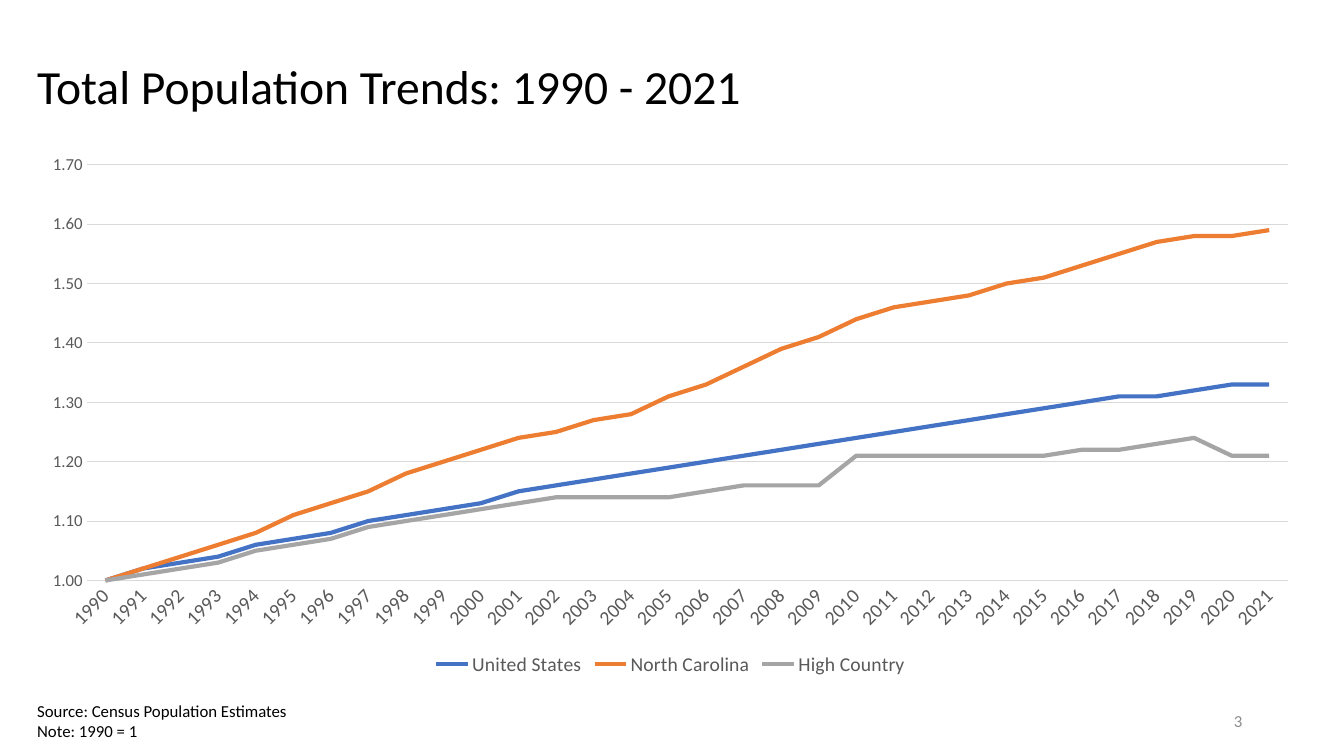
import pptx
import pptx.chart.data
import pptx.dml.color
import pptx.enum.chart
import pptx.enum.text
import pptx.util
from pptx.util import Inches

FONT = "Calibri"
COLORS = {
    "text": "000000",
    "axis": "595959",
    "grid": "D9D9D9",
    "number": "8C8C8C",
    "United States": "4472C4",
    "North Carolina": "ED7D31",
    "High Country": "A5A5A5",
}
YEARS = range(1990, 2022)
POPULATION_INDEX = {
    "United States": [
        1, 1.02, 1.03, 1.04, 1.06, 1.07, 1.08, 1.1, 1.11, 1.12, 1.13,
        1.15, 1.16, 1.17, 1.18, 1.19, 1.2, 1.21, 1.22, 1.23, 1.24, 1.25,
        1.26, 1.27, 1.28, 1.29, 1.3, 1.31, 1.31, 1.32, 1.33, 1.33],
    "North Carolina": [
        1, 1.02, 1.04, 1.06, 1.08, 1.11, 1.13, 1.15, 1.18, 1.2, 1.22,
        1.24, 1.25, 1.27, 1.28, 1.31, 1.33, 1.36, 1.39, 1.41, 1.44, 1.46,
        1.47, 1.48, 1.5, 1.51, 1.53, 1.55, 1.57, 1.58, 1.58, 1.59],
    "High Country": [
        1, 1.01, 1.02, 1.03, 1.05, 1.06, 1.07, 1.09, 1.1, 1.11, 1.12,
        1.13, 1.14, 1.14, 1.14, 1.14, 1.15, 1.16, 1.16, 1.16, 1.21, 1.21,
        1.21, 1.21, 1.21, 1.21, 1.22, 1.22, 1.23, 1.24, 1.21, 1.21],
}


def format_font(font, size, color):
    font.name = FONT
    font.size = pptx.util.Pt(size)
    font.color.rgb = pptx.dml.color.RGBColor.from_string(COLORS[color])


def add_text(text, left, top, width, height, size=12, color="text", wrap=True,
             anchor=pptx.enum.text.MSO_ANCHOR.MIDDLE,
             align=pptx.enum.text.PP_ALIGN.LEFT, line_spacing=1.0):
    """Add a text box with one paragraph for each line of text."""
    box = slide.shapes.add_textbox(
        Inches(left), Inches(top), Inches(width), Inches(height))
    frame = box.text_frame
    frame.word_wrap = wrap
    frame.vertical_anchor = anchor
    frame.text = text
    for paragraph in frame.paragraphs:
        paragraph.alignment = align
        paragraph.line_spacing = line_spacing
        format_font(paragraph.runs[0].font, size, color)
    return box


presentation = pptx.Presentation()
presentation.slide_width = Inches(13.33)
presentation.slide_height = Inches(7.5)
slide = presentation.slides.add_slide(presentation.slide_layouts[6])

add_text("Total Population Trends: 1990 - 2021", 0.27, 0.34, 12.76, 1.09,
         size=34, line_spacing=0.9)

# Population line chart
chart_data = pptx.chart.data.CategoryChartData(number_format="0.00")
chart_data.categories = [str(year) for year in YEARS]
for region, values in POPULATION_INDEX.items():
    chart_data.add_series(region, values)
chart = slide.shapes.add_chart(
    pptx.enum.chart.XL_CHART_TYPE.LINE,
    Inches(0.27), Inches(1.43), Inches(12.76), Inches(5.32), chart_data).chart
format_font(chart.font, 10, "text")
chart.has_title = False
chart.has_legend = True
chart.legend.position = pptx.enum.chart.XL_LEGEND_POSITION.BOTTOM
chart.legend.include_in_layout = False
format_font(chart.legend.font, 14, "axis")

plot = chart.plots[0]
plot.vary_by_categories = False
for series in plot.series:
    series.smooth = False
    series.marker.style = pptx.enum.chart.XL_MARKER_STYLE.NONE
    series.format.line.width = pptx.util.Pt(3)
    series.format.line.color.rgb = pptx.dml.color.RGBColor.from_string(
        COLORS[series.name])

year_axis, index_axis = chart.category_axis, chart.value_axis
for axis, size in ((year_axis, 14), (index_axis, 12)):
    axis.major_tick_mark = pptx.enum.chart.XL_TICK_MARK.NONE
    axis.minor_tick_mark = pptx.enum.chart.XL_TICK_MARK.NONE
    format_font(axis.tick_labels.font, size, "axis")
index_axis.minimum_scale = 1
index_axis.maximum_scale = 1.7
index_axis.major_unit = 0.1
index_axis.tick_labels.number_format = "0.00"
index_axis.tick_labels.number_format_is_linked = False
index_axis.format.line.fill.background()
for line in (year_axis.format.line, index_axis.major_gridlines.format.line):
    line.width = pptx.util.Pt(0.75)
    line.color.rgb = pptx.dml.color.RGBColor.from_string(COLORS["grid"])

# Footer
add_text("3", 9.42, 6.95, 3, 0.4, color="number",
         align=pptx.enum.text.PP_ALIGN.RIGHT)
source_note = add_text("Source: Census Population Estimates\nNote: 1990 = 1",
                       0.27, 6.9, 2.71, 0.5, wrap=False,
                       anchor=pptx.enum.text.MSO_ANCHOR.TOP)
source_note.text_frame.auto_size = pptx.enum.text.MSO_AUTO_SIZE.SHAPE_TO_FIT_TEXT

presentation.save("out.pptx")
